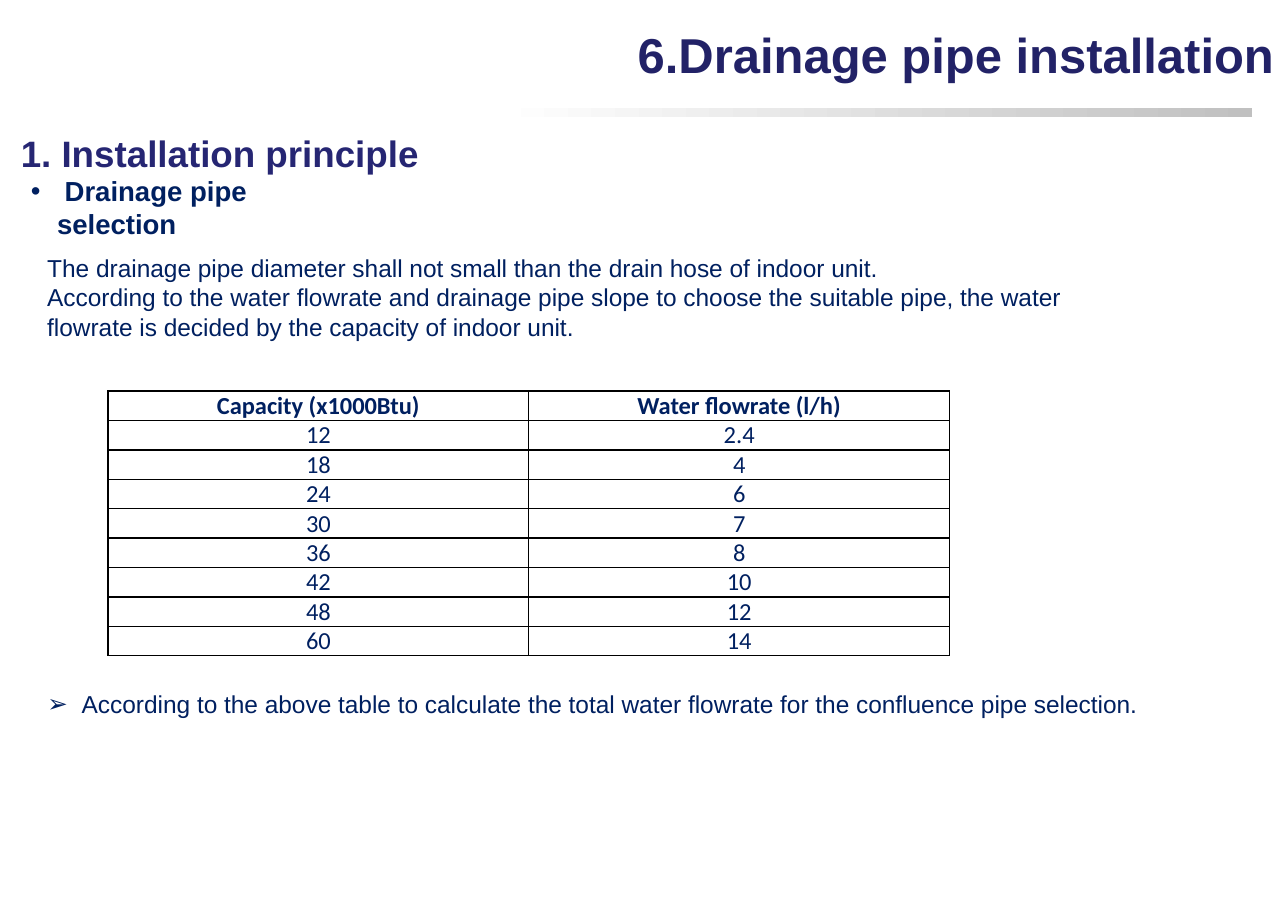
from dataclasses import dataclass

from lxml.etree import SubElement
from pptx import Presentation
from pptx.dml.color import RGBColor
from pptx.enum.shapes import MSO_SHAPE
from pptx.enum.text import MSO_ANCHOR, MSO_AUTO_SIZE, PP_ALIGN
from pptx.oxml.ns import qn
from pptx.util import Cm, Pt

NAVY = "002060"
TWO_CONTENT_LAYOUT = 3
COLUMN_WIDTH = 9.7
ROW_HEIGHT = 0.61
FLOWRATES = [
    ("Capacity (x1000Btu)", "Water flowrate (l/h)"),
    ("12", "2.4"),
    ("18", "4"),
    ("24", "6"),
    ("30", "7"),
    ("36", "8"),
    ("42", "10"),
    ("48", "12"),
    ("60", "14"),
]


@dataclass(frozen=True)
class TextBlock:
    frame: tuple[float, float, float, float]
    lines: tuple[str, ...]
    size: int
    color: str = NAVY
    bold: bool = False
    align: PP_ALIGN = PP_ALIGN.LEFT
    anchor: MSO_ANCHOR = MSO_ANCHOR.MIDDLE
    wrap: bool = True
    first_spacing: float | Pt = 1.0
    bullet: str = ""
    indent: float = 0
    placeholder: int | None = None


BLOCKS = [
    TextBlock((14.33, 0.79, 15.32, 2.26), ("6.Drainage pipe installation",), 32,
              color="222267", bold=True, align=PP_ALIGN.RIGHT, anchor=MSO_ANCHOR.TOP,
              wrap=False, first_spacing=Pt(28.4), placeholder=0),
    TextBlock((0.23, 2.9, 9.75, 1.27), ("1. Installation principle",), 24,
              color="262673", bold=True, anchor=MSO_ANCHOR.TOP, wrap=False),
    TextBlock((0.46, 4.27, 8.1, 1.02), (" Drainage pipe selection",), 18,
              bold=True, bullet="•", indent=0.6, placeholder=1),
    TextBlock((0.84, 5.36, 25.98, 2.64),
              ("The drainage pipe diameter shall not small than the drain hose of indoor unit.",
               "According to the water flowrate and drainage pipe slope to choose the suitable "
               "pipe, the water flowrate is decided by the capacity of indoor unit."),
              16, first_spacing=1.5),
    TextBlock((0.84, 15.77, 25.96, 0.94),
              ("According to the above table to calculate the total water flowrate for the "
               "confluence pipe selection.",),
              16, bullet="➢", indent=0.79, placeholder=2),
]


def rgb(color: str) -> RGBColor:
    return RGBColor.from_string(color)


def write_text(paragraph, text: str, *, size: int, color: str = NAVY, font: str = "Arial",
               bold: bool = False, align: PP_ALIGN = PP_ALIGN.LEFT,
               spacing: float | Pt = 1.0) -> None:
    paragraph.alignment = align
    paragraph.line_spacing = spacing
    paragraph.space_before = Pt(0)
    run = paragraph.add_run()
    run.text = text
    run.font.name = font
    run.font.size = Pt(size)
    run.font.bold = bold
    run.font.color.rgb = rgb(color)


def add_bullet(paragraph, character: str, indent: float) -> None:
    properties = paragraph._p.get_or_add_pPr()
    properties.set("marL", str(Cm(indent)))
    properties.set("indent", str(-Cm(indent)))
    SubElement(properties, qn("a:buFont"), typeface="Arial")
    SubElement(properties, qn("a:buChar"), char=character)


def add_block(slide, block: TextBlock) -> None:
    left, top, width, height = map(Cm, block.frame)
    if block.placeholder is None:
        shape = slide.shapes.add_textbox(left, top, width, height)
    else:
        shape = slide.placeholders[block.placeholder]
        shape.left, shape.top, shape.width, shape.height = left, top, width, height
    text_frame = shape.text_frame
    text_frame.word_wrap = block.wrap
    text_frame.auto_size = MSO_AUTO_SIZE.SHAPE_TO_FIT_TEXT
    text_frame.vertical_anchor = block.anchor
    for index, line in enumerate(block.lines):
        paragraph = text_frame.add_paragraph() if index else text_frame.paragraphs[0]
        write_text(paragraph, line, size=block.size, color=block.color, bold=block.bold,
                   align=block.align, spacing=1.0 if index else block.first_spacing)
        if block.bullet:
            add_bullet(paragraph, block.bullet, block.indent)


def add_title_rule(slide) -> None:
    rule = slide.shapes.add_shape(MSO_SHAPE.RECTANGLE, Cm(11.46), Cm(2.49), Cm(17.4), Cm(0.2))
    rule.shadow.inherit = False
    rule.line.fill.background()
    rule.fill.gradient()
    rule.fill.gradient_angle = 0
    for stop, position, color in zip(rule.fill.gradient_stops, (0, 1), ("FFFFFF", "C0C0C0")):
        stop.position = position
        stop.color.rgb = rgb(color)


def add_borders(cell, color: str) -> None:
    properties = cell._tc.get_or_add_tcPr()
    for index, side in enumerate(("lnL", "lnR", "lnT", "lnB")):
        line = properties.makeelement(qn(f"a:{side}"), {"w": str(Pt(1))})
        fill = SubElement(line, qn("a:solidFill"))
        SubElement(fill, qn("a:srgbClr"), val=color)
        properties.insert(index, line)


def add_flowrate_table(slide) -> None:
    rows, columns = len(FLOWRATES), len(FLOWRATES[0])
    table = slide.shapes.add_table(rows, columns, Cm(2.49), Cm(9.02),
                                   Cm(COLUMN_WIDTH * columns), Cm(ROW_HEIGHT * rows)).table
    for row_index, values in enumerate(FLOWRATES):
        for column_index, value in enumerate(values):
            cell = table.cell(row_index, column_index)
            cell.fill.background()
            cell.vertical_anchor = MSO_ANCHOR.MIDDLE
            cell.margin_left = cell.margin_right = Cm(0.18)
            cell.margin_top = cell.margin_bottom = 0
            add_borders(cell, "000000")
            write_text(cell.text_frame.paragraphs[0], value, size=16, font="Calibri",
                       bold=row_index == 0, align=PP_ALIGN.CENTER)


def main() -> None:
    presentation = Presentation()
    presentation.slide_width = Cm(29.69)
    presentation.slide_height = Cm(21.01)
    slide = presentation.slides.add_slide(presentation.slide_layouts[TWO_CONTENT_LAYOUT])
    add_title_rule(slide)
    for block in BLOCKS:
        add_block(slide, block)
    add_flowrate_table(slide)
    presentation.save("out.pptx")


if __name__ == "__main__":
    main()
